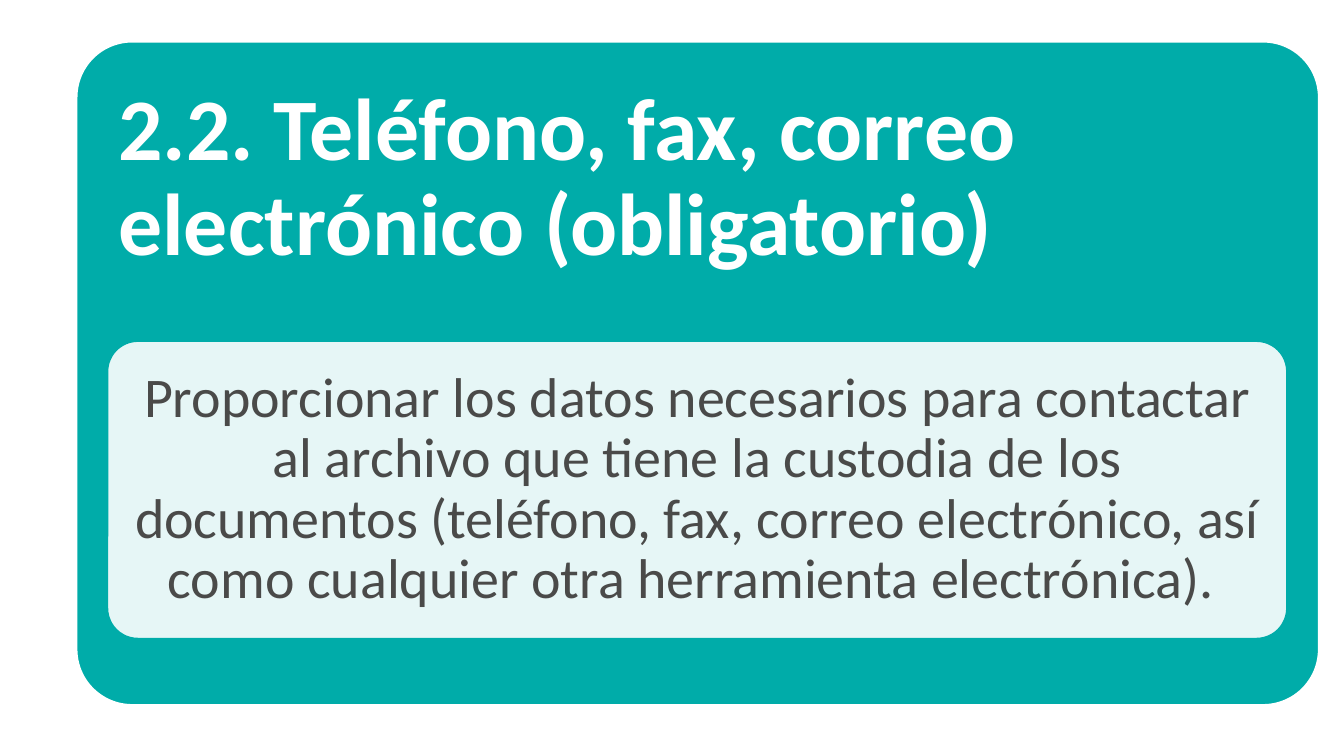
from lxml.etree import SubElement
from pptx import Presentation
from pptx.dml.color import RGBColor
from pptx.enum.shapes import MSO_SHAPE
from pptx.enum.text import MSO_ANCHOR, MSO_AUTO_SIZE, PP_ALIGN
from pptx.oxml.ns import qn
from pptx.util import Pt

COLORS = {"teal": "00ACA9", "white": "FFFFFF", "text": "4A4A49"}
FONT = "Calibri"


def color(name):
    return RGBColor.from_string(COLORS[name])


def add_panel(slide, box, corner, fill, line, opacity=100):
    """Rounded panel; opacity is in percent."""
    panel = slide.shapes.add_shape(
        MSO_SHAPE.ROUNDED_RECTANGLE, *[Pt(value) for value in box])
    panel.adjustments[0] = corner
    panel.shadow.inherit = False
    panel.fill.solid()
    panel.fill.fore_color.rgb = color(fill)
    panel.line.color.rgb = color(line)
    panel.line.width = Pt(2)
    if opacity < 100:
        fill_color = panel._element.spPr.find(qn("a:solidFill"))[0]
        SubElement(fill_color, qn("a:alpha"), val=str(opacity * 1000))


def fill_placeholder(slide, placeholder, text, box, insets, size, ink,
                     align, anchor, bold=False):
    """Place and format a placeholder in front of the panels."""
    slide.shapes._spTree.append(placeholder._element)
    placeholder.left, placeholder.top, placeholder.width, placeholder.height = [
        Pt(value) for value in box]
    frame = placeholder.text_frame
    frame.text = text
    frame.word_wrap = True
    frame.auto_size = MSO_AUTO_SIZE.NONE
    frame.vertical_anchor = anchor
    (frame.margin_left, frame.margin_top,
     frame.margin_right, frame.margin_bottom) = [Pt(value) for value in insets]

    paragraph = frame.paragraphs[0]
    properties = paragraph._p.get_or_add_pPr()
    properties.set("marL", "0")
    properties.set("indent", "0")
    SubElement(properties, qn("a:buNone"))
    paragraph.alignment = align
    paragraph.line_spacing = 0.9
    paragraph.space_before = Pt(0)
    font = paragraph.runs[0].font
    font.name, font.size, font.bold = FONT, Pt(size), bold
    font.color.rgb = color(ink)


def main():
    presentation = Presentation()
    presentation.slide_width, presentation.slide_height = Pt(720), Pt(405)
    slide = presentation.slides.add_slide(presentation.slide_layouts[1])

    # Teal card with the pale description panel on it
    add_panel(slide, (40.5, 21.8, 666.5, 356.4), 0.085, "teal", "white")
    add_panel(slide, (57, 182.2, 633, 160.5), 0.105, "white", "teal", opacity=90)

    # Section heading
    fill_placeholder(
        slide, slide.shapes.title,
        "2.2. Teléfono, fax, correo electrónico (obligatorio)",
        (49, 31, 648.7, 338.4), (14.4, 14.4, 14.4, 219.6), 47, "white",
        PP_ALIGN.LEFT, MSO_ANCHOR.TOP, bold=True)

    # Description
    fill_placeholder(
        slide, slide.placeholders[1],
        "Proporcionar los datos necesarios para contactar al archivo que tiene "
        "la custodia de los documentos (teléfono, fax, correo electrónico, así "
        "como cualquier otra herramienta electrónica). ",
        (61.9, 187.2, 623.5, 150.5), (8.64,) * 4, 30, "text",
        PP_ALIGN.CENTER, MSO_ANCHOR.MIDDLE)

    presentation.save("out.pptx")


if __name__ == "__main__":
    main()
